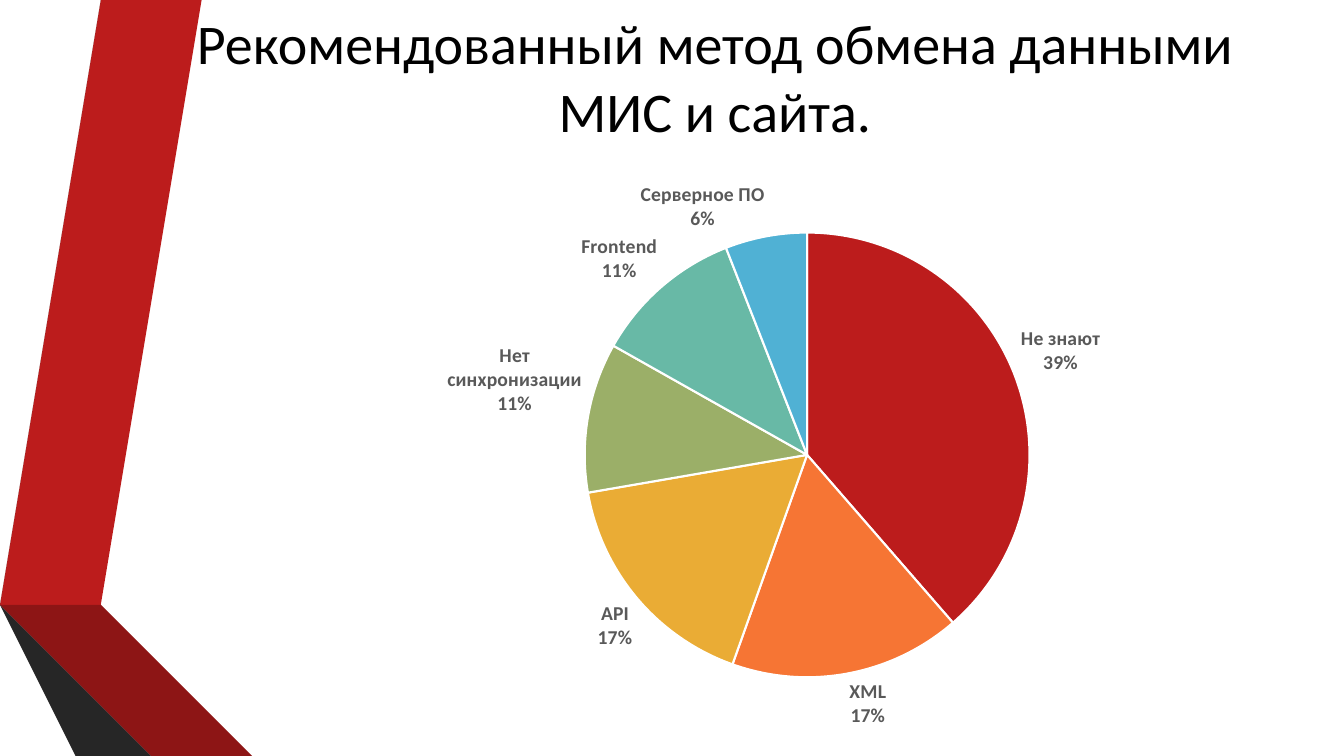
from lxml import etree
from pptx import Presentation
from pptx.chart.data import CategoryChartData as ChartData
from pptx.dml.color import RGBColor as Color
from pptx.enum.chart import XL_CHART_TYPE as ChartType, XL_LABEL_POSITION as LabelPosition
from pptx.enum.text import MSO_ANCHOR as Anchor, PP_ALIGN as Align
from pptx.oxml.ns import qn
from pptx.util import Inches, Pt

COLORS = {
    "red": "BC1C1C", "red_dark": "8D1515", "red_edge": "5E0E0E",
    "gray": "595959", "gray_dark": "404040", "gray_edge": "262626",
    "orange": "F67534", "yellow": "EAAC35", "olive": "9BAF68",
    "teal": "68B9A6", "blue": "50B1D4", "black": "000000", "white": "FFFFFF",
}
RIBBONS = [
    ("red", [(0.5, 5.78), (0.77, 5.83), (1.73, 0), (1.45, 0)]),
    ("gray", [(1.39, 0), (1.11, 0), (0.16, 5.73), (0.44, 5.77)]),
    ("gray_edge", [(0.16, 5.73), (1.45, 7.5), (1.51, 7.5)]),
    ("red_edge", [(0.5, 5.79), (2.08, 7.5), (2.14, 7.5)]),
    ("red_dark", [(0.5, 5.79), (2.14, 7.5), (2.83, 7.5), (0.77, 5.83), (0.5, 5.78)]),
    ("gray_dark", [(2.02, 7.5), (0.48, 5.83), (0.44, 5.77), (0.16, 5.73), (1.51, 7.5)]),
]
METHODS = [
    ("Не знают", 39, "red"),
    ("XML", 17, "orange"),
    ("API", 17, "yellow"),
    ("Нет синхронизации", 11, "olive"),
    ("Frontend", 11, "teal"),
    ("Серверное ПО", 6, "blue"),
]
PIE_AREA = {"x": 0.26, "y": 0.12, "w": 0.6, "h": 0.77}


def rgb(name):
    return Color.from_string(COLORS[name])


def write(frame, text, size, color, align=Align.CENTER, font="Calibri"):
    frame.word_wrap = True
    frame.vertical_anchor = Anchor.MIDDLE
    para = frame.paragraphs[0]
    para.alignment = align
    span = para.add_run()
    span.text = text
    span.font.name = font
    span.font.size = Pt(size)
    span.font.color.rgb = rgb(color)


deck = Presentation()
deck.slide_width, deck.slide_height = Inches(13.33), Inches(7.5)
page = deck.slides.add_slide(deck.slide_layouts[5])
title = page.shapes.title

for color, points in RIBBONS:
    outline = page.shapes.build_freeform(*points[0], scale=Inches(1))
    outline.add_line_segments(points[1:], close=True)
    ribbon = outline.convert_to_shape()
    ribbon.shadow.inherit = False
    ribbon.fill.solid()
    ribbon.fill.fore_color.rgb = rgb(color)
    ribbon.line.fill.background()

page.shapes._spTree.append(title._element)
title.left, title.top = Inches(1.61), 0
title.width, title.height = Inches(10.96), Inches(1.51)
write(title.text_frame, "Рекомендованный метод обмена данными МИС и сайта.", 40, "black")

data = ChartData()
data.categories = [name for name, value, color in METHODS]
data.add_series("Series 1", [value for name, value, color in METHODS])
chart = page.shapes.add_chart(
    ChartType.PIE, Inches(3.85), Inches(1.62), Inches(7.42), Inches(5.73), data
).chart
chart.has_title = False
chart.has_legend = False
chart.font.name = "Calibri"
chart.font.size = Pt(10)
chart.font.color.rgb = rgb("black")

plot = chart.plots[0]
plot.vary_by_categories = True
series = plot.series[0]
for index, (name, value, color) in enumerate(METHODS):
    piece = series.points[index].format
    piece.fill.solid()
    piece.fill.fore_color.rgb = rgb(color)
    piece.line.color.rgb = rgb("white")
    piece.line.width = Pt(1.5)

labels = series.data_labels
labels.show_value = False
labels.show_category_name = True
labels.show_percentage = True
labels.number_format = "0%"
labels.number_format_is_linked = False
labels.position = LabelPosition.OUTSIDE_END
labels.font.name = "Calibri"
labels.font.size = Pt(14)
labels.font.bold = True
labels.font.color.rgb = rgb("gray")
separator = etree.Element(qn("c:separator"))
separator.text = "\n"
labels._element.find(qn("c:showBubbleSize")).addnext(separator)

plot_area = chart._chartSpace.find(".//" + qn("c:plotArea"))
for old in plot_area.findall(qn("c:layout")):
    plot_area.remove(old)
layout = etree.Element(qn("c:layout"))
manual = etree.SubElement(layout, qn("c:manualLayout"))
settings = {"layoutTarget": "inner", "xMode": "edge", "yMode": "edge", **PIE_AREA}
for tag, value in settings.items():
    etree.SubElement(manual, qn("c:" + tag)).set("val", str(value))
plot_area.insert(0, layout)

deck.save("out.pptx")
